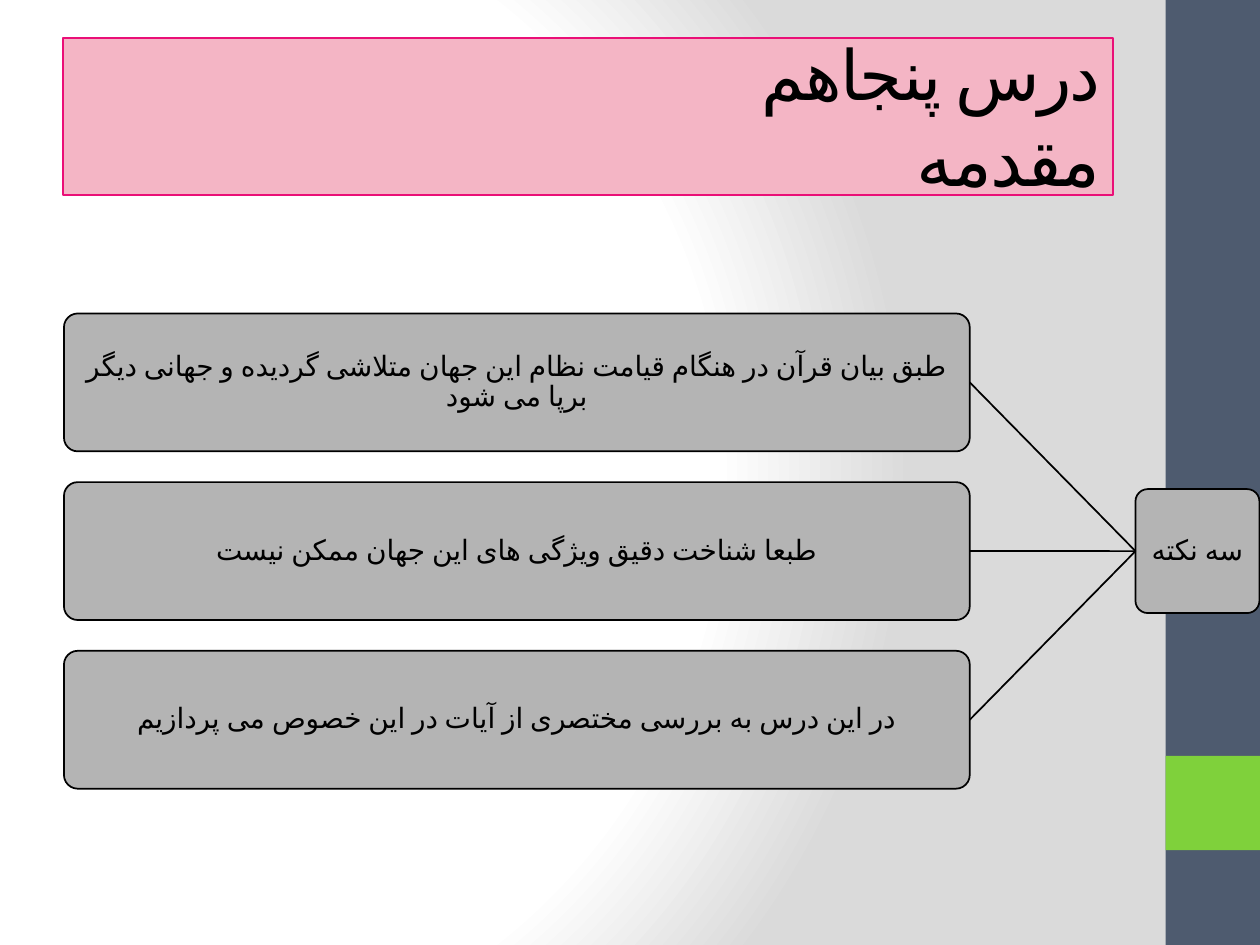
from lxml.etree import SubElement
from pptx import Presentation
from pptx.dml.color import RGBColor
from pptx.enum.shapes import MSO_CONNECTOR, MSO_SHAPE
from pptx.enum.text import MSO_ANCHOR, PP_ALIGN
from pptx.oxml.ns import qn
from pptx.util import Cm, Pt

COLORS = {
    "white": "FFFFFF",
    "mist": "DADADA",
    "slate": "4E5B6F",
    "green": "7FD13B",
    "pink": "F4B5C5",
    "magenta": "EA0F77",
    "gray": "B4B4B4",
    "black": "000000",
}
POINTS = [
    "طبق بیان قرآن در هنگام قیامت نظام این جهان متلاشی گردیده و جهانی دیگر برپا می شود",
    "طبعا شناخت دقیق ویژگی های این جهان ممکن نیست",
    "در این درس به بررسی مختصری از آیات در این خصوص می پردازیم",
]


def add_box(kind, left, top, width, height, fill, line=None):
    box = slide.shapes.add_shape(kind, Cm(left), Cm(top), Cm(width), Cm(height))
    box.shadow.inherit = False
    box.fill.solid()
    box.fill.fore_color.rgb = RGBColor.from_string(COLORS[fill])
    if line:
        box.line.color.rgb = RGBColor.from_string(COLORS[line])
        box.line.width = Pt(1)
    else:
        box.line.fill.background()
    if kind == MSO_SHAPE.ROUNDED_RECTANGLE:
        box.adjustments[0] = 0.1
    return box


def write(box, text, sizes=(16,), align=PP_ALIGN.CENTER, spacing=0.9, inset=0.1, tracking=0):
    frame = box.text_frame
    frame.word_wrap = True
    frame.vertical_anchor = MSO_ANCHOR.MIDDLE
    frame.margin_left = frame.margin_right = Cm(inset)
    frame.margin_top = frame.margin_bottom = Cm(0.1)
    paragraph = frame.paragraphs[0]
    paragraph.alignment = align
    paragraph.line_spacing = spacing
    paragraph._p.get_or_add_pPr().set("rtl", "1")
    for index, (words, size) in enumerate(zip(text.split("\n"), sizes)):
        if index:
            paragraph.add_line_break()
        run = paragraph.add_run()
        run.text = words
        run.font.size = Pt(size)
        run.font.name = "Calibri"
        run.font.color.rgb = RGBColor.from_string(COLORS["black"])
        properties = run._r.get_or_add_rPr()
        properties.set("lang", "fa-IR")
        properties.set("spc", str(tracking))


deck = Presentation()
deck.slide_width, deck.slide_height = Cm(25.4), Cm(19.05)
slide = deck.slides.add_slide(deck.slide_layouts[6])

slide.background.fill.gradient()
gradient = slide.element.find(".//" + qn("a:gradFill"))
for child in list(gradient):
    gradient.remove(child)
stops = SubElement(gradient, qn("a:gsLst"))
for position, color in ((0, "white"), (75, "white"), (100, "mist")):
    stop = SubElement(stops, qn("a:gs"), pos=str(position * 1000))
    SubElement(stop, qn("a:srgbClr"), val=COLORS[color])
circle = SubElement(gradient, qn("a:path"), path="circle")
SubElement(circle, qn("a:fillToRect"), l="20000", t="50000", r="100000", b="50000")

add_box(MSO_SHAPE.RECTANGLE, 23.5, 0, 1.9, 19.05, "slate")
add_box(MSO_SHAPE.RECTANGLE, 23.5, 15.24, 1.9, 1.9, "green")

title = add_box(MSO_SHAPE.RECTANGLE, 1.27, 0.76, 21.17, 3.17, "pink", "magenta")
write(title, "درس پنجاهم\nمقدمه", sizes=(39.6, 41.4), align=PP_ALIGN.RIGHT,
      spacing=1.0, inset=0.25, tracking=-100)

hub = add_box(MSO_SHAPE.ROUNDED_RECTANGLE, 22.89, 9.86, 2.5, 2.5, "gray", "black")
write(hub, "سه نکته")

for row, point in enumerate(POINTS):
    point_box = add_box(MSO_SHAPE.ROUNDED_RECTANGLE, 1.29, 6.32 + 3.4 * row, 18.26, 2.78, "gray", "black")
    write(point_box, point)
    branch = slide.shapes.add_connector(MSO_CONNECTOR.STRAIGHT, 0, 0, 0, 0)
    branch.begin_connect(hub, 1)
    branch.end_connect(point_box, 3)
    branch.line.color.rgb = RGBColor.from_string(COLORS["black"])
    branch.line.width = Pt(1)
    SubElement(branch._element.spPr, qn("a:effectLst"))

deck.save("out.pptx")
